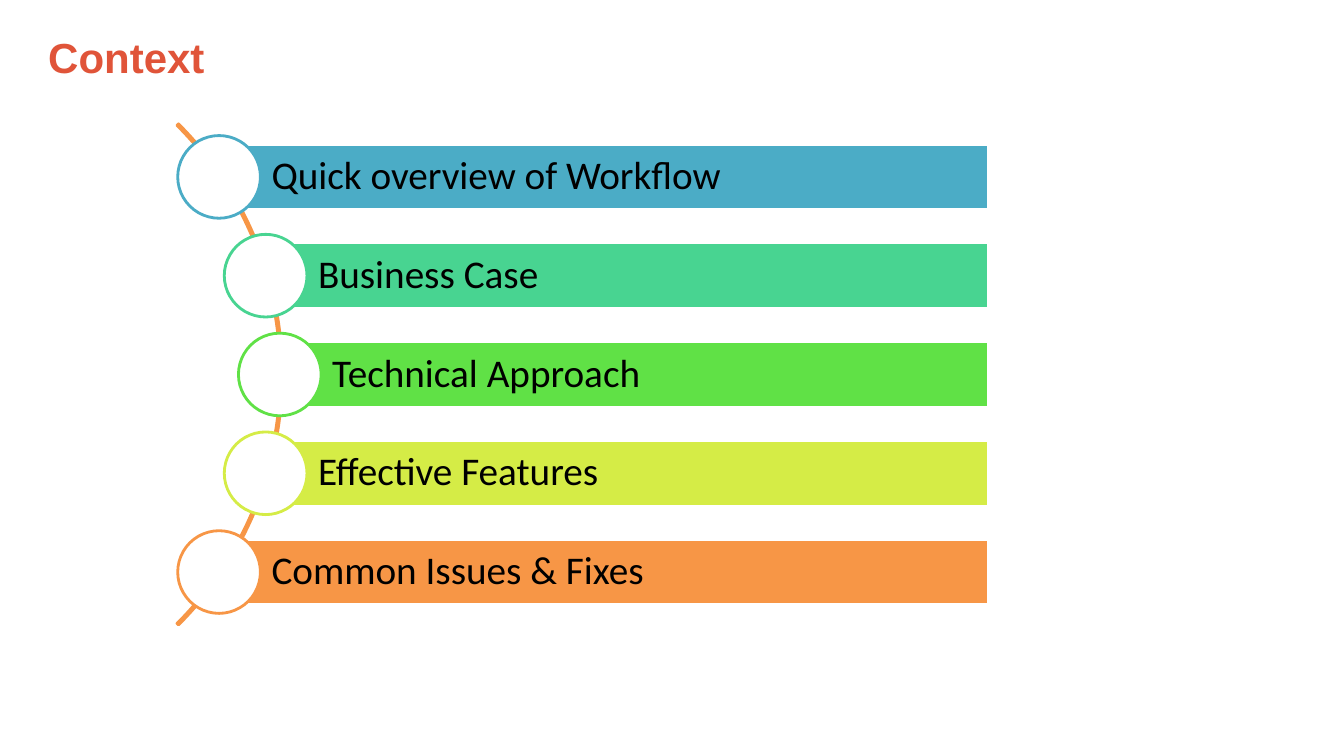
"""Build the Context agenda slide: five coloured bars fanned along an arc."""
import math

import pptx
import pptx.dml.color
import pptx.enum.shapes
import pptx.enum.text
import pptx.util

Inches = pptx.util.Inches
Shapes = pptx.enum.shapes.MSO_SHAPE

COLORS = {
    "title": "E05439",
    "text": "000000",
    "white": "FFFFFF",
    "blue": "4BACC6",
    "teal": "48D491",
    "green": "60E146",
    "lime": "D5EC46",
    "orange": "F79646",
}

TOPICS = [
    ("Quick overview of Workflow", "blue"),
    ("Business Case", "teal"),
    ("Technical Approach", "green"),
    ("Effective Features", "lime"),
    ("Common Issues & Fixes", "orange"),
]

CENTER_X, CENTER_Y = -0.715, 3.715
ARC_SIZE = 7.03
MARKER_ORBIT = 3.49
MARKER_SIZE = 0.82
BAR_HEIGHT = 0.65
BAR_RIGHT = 9.8
BAR_PITCH = 0.98


class AgendaSlide:
    """Hold the style and the current slide."""

    def __init__(self, slide):
        self.slide = slide
        self.line_width = pptx.util.Pt(2)

    def color(self, name):
        return pptx.dml.color.RGBColor.from_string(COLORS[name])

    def shape(self, kind, left, top, width, height, line, fill=None):
        shape = self.slide.shapes.add_shape(
            kind, Inches(left), Inches(top), Inches(width), Inches(height))
        shape.shadow.inherit = False
        if fill:
            shape.fill.solid()
            shape.fill.fore_color.rgb = self.color(fill)
        else:
            shape.fill.background()
        shape.line.color.rgb = self.color(line)
        shape.line.width = self.line_width
        return shape

    def text(self, box, words, size, font, color, insets, bold=False):
        frame = box.text_frame
        frame.text = words
        frame.word_wrap = True
        frame.vertical_anchor = pptx.enum.text.MSO_ANCHOR.MIDDLE
        (frame.margin_left, frame.margin_top,
         frame.margin_right, frame.margin_bottom) = map(Inches, insets)
        para = frame.paragraphs[0]
        para.alignment = pptx.enum.text.PP_ALIGN.LEFT
        span = para.runs[0]
        span.font.size = pptx.util.Pt(size)
        span.font.name = font
        span.font.bold = bold
        span.font.color.rgb = self.color(color)
        return para

    def title(self, words):
        box = self.slide.shapes.add_textbox(
            Inches(0.38), Inches(0), Inches(9.71), Inches(1.13))
        self.text(box, words, 30, "Arial", "title",
                  (0.1, 0.05, 0.1, 0.05), bold=True)

    def arc(self):
        arc = self.shape(Shapes.BLOCK_ARC, CENTER_X - ARC_SIZE / 2,
                         CENTER_Y - ARC_SIZE / 2, ARC_SIZE, ARC_SIZE, "orange")
        for index, value in enumerate((189, 27, 0.003)):
            arc.adjustments[index] = value

    def topic(self, words, color, offset):
        middle_x = CENTER_X + math.sqrt(MARKER_ORBIT ** 2 - offset ** 2)
        middle_y = CENTER_Y + offset
        bar = self.shape(Shapes.RECTANGLE, middle_x, middle_y - BAR_HEIGHT / 2,
                         BAR_RIGHT - middle_x, BAR_HEIGHT, "white", color)
        para = self.text(bar, words, 28, "Calibri", "text",
                         (0.52, 0.08, 0.08, 0.08))
        para.line_spacing = 0.9
        self.shape(Shapes.OVAL, middle_x - MARKER_SIZE / 2,
                   middle_y - MARKER_SIZE / 2, MARKER_SIZE, MARKER_SIZE,
                   color, "white")


def main():
    deck = pptx.Presentation()
    deck.slide_width = Inches(13.33)
    deck.slide_height = Inches(7.5)
    page = AgendaSlide(deck.slides.add_slide(deck.slide_layouts[6]))
    page.title("Context")
    page.arc()
    for index, (words, color) in enumerate(TOPICS):
        page.topic(words, color, (index - len(TOPICS) // 2) * BAR_PITCH)
    deck.save("out.pptx")


if __name__ == "__main__":
    main()
